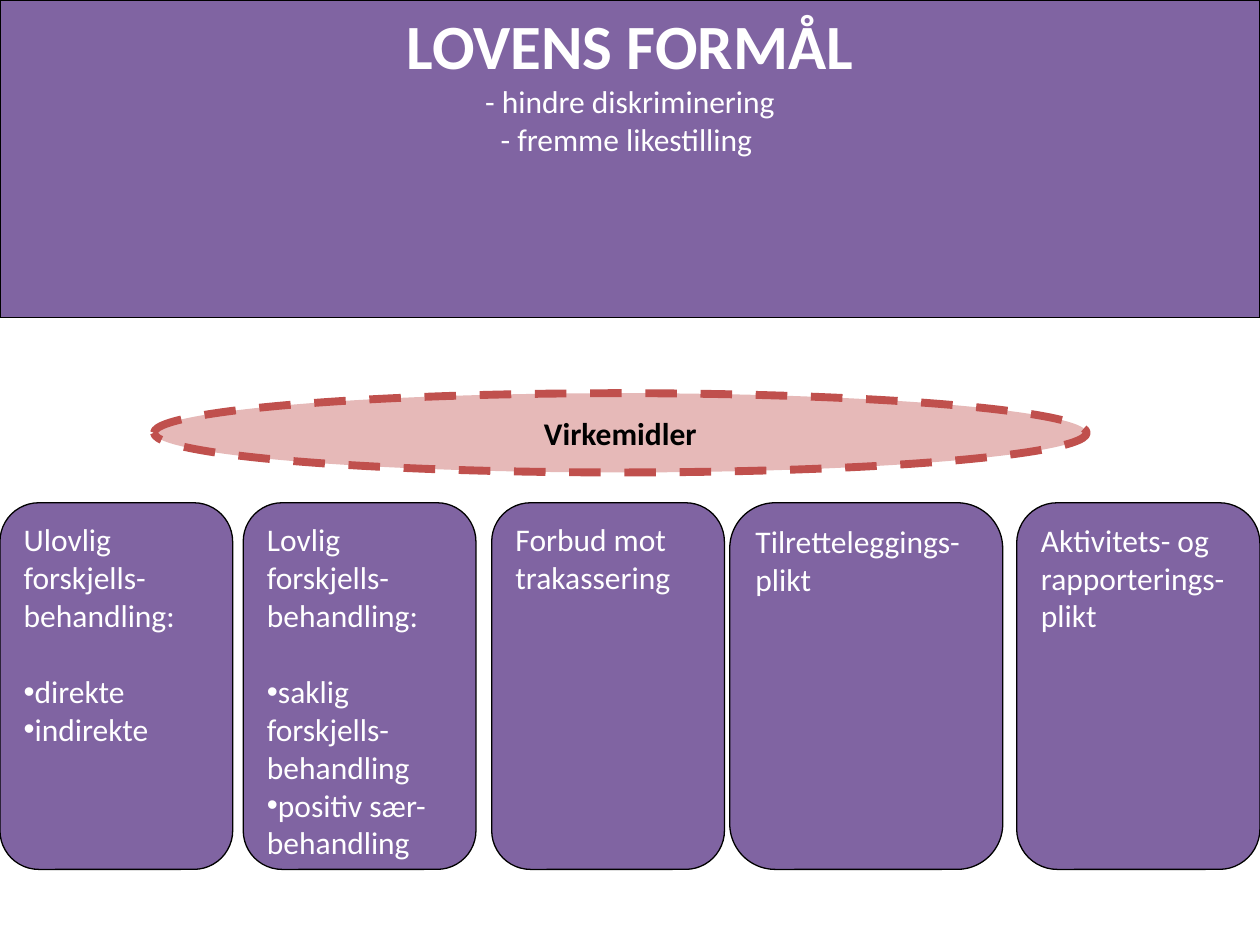
"""Build a slide on the aim of the law and its means."""
from lxml import etree
from pptx import Presentation
from pptx import util as u
from pptx.dml.color import RGBColor
from pptx.enum import dml, shapes, text
from pptx.oxml import ns

FONT = "Calibri"
PURPLE, WHITE, BLACK = "8064A2", "FFFFFF", "000000"
PINK, RED = "E6B9B8", "C0504D"
MID = text.PP_ALIGN.CENTER
LEFT = text.PP_ALIGN.LEFT
TOP = text.MSO_ANCHOR.TOP

CARDS = [
    (0, 133, ["Ulovlig", "forskjells-", "behandling:", "•direkte", "•indirekte"]),
    (139, 133, ["Lovlig forskjells-behandling:", "•saklig forskjells-",
                "behandling", "•positiv sær-behandling"]),
    (281, 133, ["Forbud mot trakassering"]),
    (417, 156, ["Tilretteleggings-plikt"]),
    (581, 139, ["Aktivitets- og rapporterings-plikt"]),
]


def rgb(code):
    """Turn a hex string into a colour."""
    return RGBColor.from_string(code)


def place(shape, x, y, w, h):
    """Move and size a shape in points."""
    shape.left, shape.top = u.Pt(x), u.Pt(y)
    shape.width, shape.height = u.Pt(w), u.Pt(h)


def paint(shape, fill, line, width):
    """Set the fill and outline of a shape."""
    shape.fill.solid()
    shape.fill.fore_color.rgb = rgb(fill)
    shape.line.color.rgb = rgb(line)
    shape.line.width = u.Pt(width)


def style(para, size, color, bold, align):
    """Set the font and alignment of a paragraph."""
    para.alignment = align
    font = para.font
    font.name, font.size, font.bold = FONT, u.Pt(size), bold
    font.color.rgb = rgb(color)


def bullet(para):
    """Give a paragraph a round bullet without indent."""
    props = para._p.get_or_add_pPr()
    etree.SubElement(props, ns.qn("a:buFont"), typeface="Arial")
    etree.SubElement(props, ns.qn("a:buChar"), char="•")


def write(shape, lines, anchor):
    """Fill a shape's frame and return its paragraphs."""
    frame = shape.text_frame
    frame.text = "\n".join(lines)
    frame.word_wrap = True
    frame.auto_size = text.MSO_AUTO_SIZE.NONE
    frame.vertical_anchor = anchor
    return frame.paragraphs


def banner(slide):
    """Turn the title into the full-width band."""
    band = slide.shapes.title
    place(band, 0, 0, 720, 181.5)
    paint(band, PURPLE, BLACK, 0.75)
    lines = ["LOVENS FORMÅL", "- hindre diskriminering", "- fremme likestilling "]
    head, *rest = write(band, lines, TOP)
    style(head, 36, WHITE, True, MID)
    for para in rest:
        style(para, 18, WHITE, False, MID)


def card(slide, x, w, lines):
    """Add a rounded card with text and bullets."""
    kind = shapes.MSO_SHAPE.ROUNDED_RECTANGLE
    box = slide.shapes.add_shape(kind, u.Pt(x), u.Pt(287.3), u.Pt(w), u.Pt(209.5))
    box.shadow.inherit = False
    paint(box, PURPLE, BLACK, 0.75)
    fresh = True
    for para, line in zip(write(box, [s.lstrip("•") for s in lines], TOP), lines):
        if line.startswith("•"):
            if fresh:
                para.space_before = u.Pt(22)
            fresh = False
            bullet(para)
        style(para, 18, WHITE, False, LEFT)


def oval(slide):
    """Add the dashed ellipse that heads the cards."""
    ring = slide.shapes.add_shape(
        shapes.MSO_SHAPE.OVAL, u.Pt(88), u.Pt(224.7), u.Pt(533), u.Pt(45.3))
    ring.shadow.inherit = False
    paint(ring, PINK, RED, 4.5)
    ring.line.dash_style = dml.MSO_LINE.DASH
    para, = write(ring, ["Virkemidler"], text.MSO_ANCHOR.MIDDLE)
    style(para, 18, BLACK, True, MID)


def main():
    """Build and save the slide."""
    deck = Presentation()
    deck.slide_width, deck.slide_height = u.Pt(720), u.Pt(540)
    slide = deck.slides.add_slide(deck.slide_layouts[5])
    banner(slide)
    for x, w, lines in CARDS:
        card(slide, x, w, lines)
    oval(slide)
    deck.save("out.pptx")


if __name__ == "__main__":
    main()
